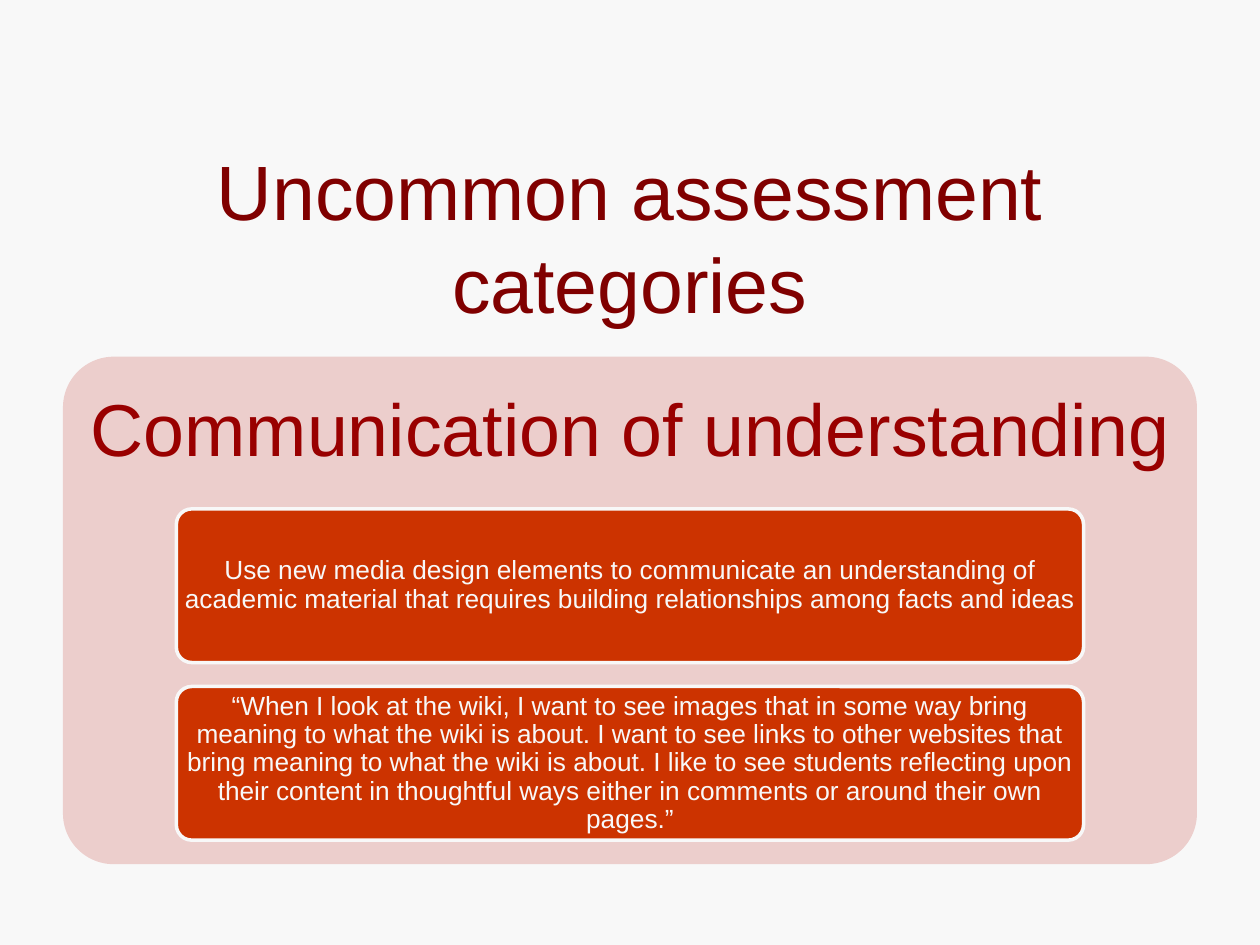
import pptx
import pptx.dml.color
import pptx.enum.shapes
import pptx.enum.text
import pptx.util

Pt = pptx.util.Pt
RGBColor = pptx.dml.color.RGBColor

PAPER = RGBColor(0xF8, 0xF8, 0xF8)
MAROON = RGBColor(0x80, 0x00, 0x00)
CRIMSON = RGBColor(0x99, 0x00, 0x00)
BLUSH = RGBColor(0xEC, 0xCE, 0xCC)
RUST = RGBColor(0xCC, 0x33, 0x00)

PANEL_LEFT, PANEL_TOP, PANEL_WIDTH, PANEL_HEIGHT = 36, 203.8, 648, 290
HEADING_HEIGHT = PANEL_HEIGHT * 0.3
CARD_LEFT, CARD_WIDTH, CARD_HEIGHT, CARD_STEP = 100.8, 518.4, 87.8, 101.5

CARDS = [
    "Use new media design elements to communicate an understanding of academic "
    "material that requires building relationships among facts and ideas",
    "“When I look at the wiki, I want to see images that in some way bring meaning "
    "to what the wiki is about. I want to see links to other websites that bring "
    "meaning to what the wiki is about. I like to see students reflecting upon their "
    "content in thoughtful ways either in comments or around their own pages.”",
]


def write_text(box, text, size, color, spacing=1.0, margins=(7.2, 3.6)):
    frame = box.text_frame
    frame.word_wrap = True
    frame.auto_size = pptx.enum.text.MSO_AUTO_SIZE.NONE
    frame.vertical_anchor = pptx.enum.text.MSO_ANCHOR.MIDDLE
    frame.margin_left = frame.margin_right = Pt(margins[0])
    frame.margin_top = frame.margin_bottom = Pt(margins[1])
    para = frame.paragraphs[0]
    para.alignment = pptx.enum.text.PP_ALIGN.CENTER
    para.line_spacing = spacing
    span = para.add_run()
    span.text = text
    span.font.name = "Arial"
    span.font.size = Pt(size)
    span.font.color.rgb = color


def add_title(page, text):
    title = page.shapes.title
    title.left, title.top = Pt(36), Pt(90)
    title.width, title.height = Pt(648), Pt(90)
    write_text(title, text, size=44, color=MAROON)


def add_rounded(page, left, top, width, height, fill, outline=None):
    box = page.shapes.add_shape(
        pptx.enum.shapes.MSO_SHAPE.ROUNDED_RECTANGLE,
        Pt(left), Pt(top), Pt(width), Pt(height))
    box.adjustments[0] = 0.1
    box.shadow.inherit = False
    box.fill.solid()
    box.fill.fore_color.rgb = fill
    if outline is None:
        box.line.fill.background()
    else:
        box.line.color.rgb = outline
        box.line.width = Pt(2)
    return box


def add_heading(page, text):
    box = page.shapes.add_textbox(
        Pt(PANEL_LEFT), Pt(PANEL_TOP), Pt(PANEL_WIDTH), Pt(HEADING_HEIGHT))
    write_text(box, text, size=42, color=CRIMSON, spacing=0.9, margins=(12, 12))


def add_card(page, index, text):
    top = PANEL_TOP + HEADING_HEIGHT + index * CARD_STEP
    card = add_rounded(page, CARD_LEFT, top, CARD_WIDTH, CARD_HEIGHT, RUST, PAPER)
    write_text(card, text, size=15, color=PAPER, spacing=0.9, margins=(0.3, 0))


def main():
    deck = pptx.Presentation()
    deck.slide_width, deck.slide_height = Pt(720), Pt(540)
    page = deck.slides.add_slide(deck.slide_layouts.get_by_name("Title Only"))
    page.background.fill.solid()
    page.background.fill.fore_color.rgb = PAPER
    add_title(page, "Uncommon assessment categories")
    add_rounded(page, PANEL_LEFT, PANEL_TOP, PANEL_WIDTH, PANEL_HEIGHT, BLUSH)
    add_heading(page, "Communication of understanding")
    for index, text in enumerate(CARDS):
        add_card(page, index, text)
    deck.save("out.pptx")


if __name__ == "__main__":
    main()
